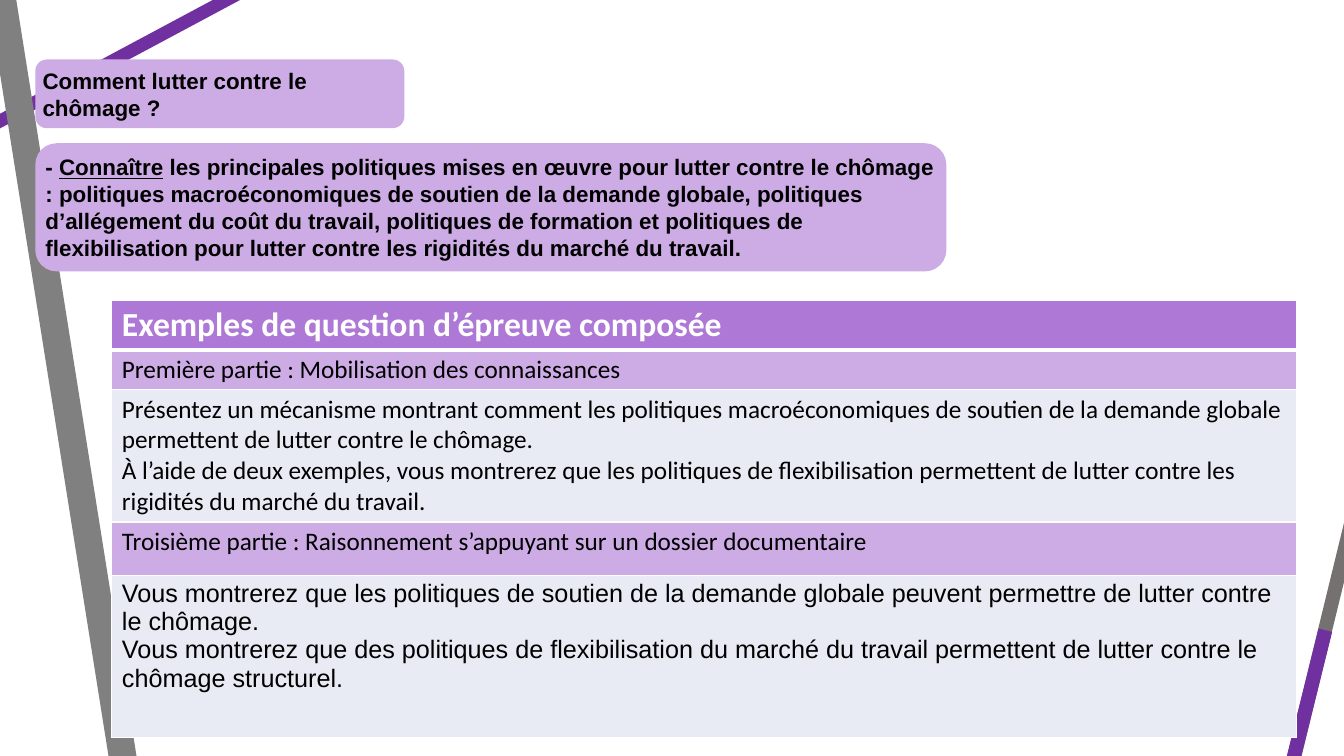
from pptx import Presentation
from pptx.dml.color import RGBColor
from pptx.enum.shapes import MSO_CONNECTOR, MSO_SHAPE
from pptx.enum.text import MSO_ANCHOR, PP_ALIGN
from pptx.oxml.ns import qn
from pptx.util import Cm, Pt
from lxml.etree import SubElement

PURPLE = RGBColor(0x70, 0x30, 0xA0)
GREY = RGBColor(0x80, 0x80, 0x80)
DARK_GREY = RGBColor(0x76, 0x71, 0x71)
LILAC = RGBColor(0xCD, 0xAC, 0xE6)
VIOLET = RGBColor(0xAE, 0x78, 0xD6)
PALE = RGBColor(0xE8, 0xEB, 0xF4)
BLACK = RGBColor(0, 0, 0)
WHITE = RGBColor(255, 255, 255)

STRIPES = [
    ((-5.31, 5.89), (13.11, -3.96), PURPLE, 9.25),
    ((0, -0.36), (3.2, 19.76), GREY, 19.75),
    ((31.14, 25.12), (34.67, 10.64), DARK_GREY, 10),
    ((30.94, 25.78), (33.4, 15.88), PURPLE, 10),
]
PANELS = [
    ((0.89, 1.5, 9.3, 1.73), [("Comment lutter contre le chômage ?", False)]),
    ((0.89, 3.61, 22.96, 3.23), [
        ("- ", False),
        ("Connaître", True),
        (" les principales politiques mises en œuvre pour lutter contre le chômage : "
         "politiques macroéconomiques de soutien de la demande globale, politiques "
         "d’allégement du coût du travail, politiques de formation et politiques de "
         "flexibilisation pour lutter contre les rigidités du marché du travail.", False),
    ]),
]
EXAM_ROWS = [
    (1.24, VIOLET, "Calibri", ["Exemples de question d’épreuve composée"]),
    (1.0, LILAC, "Calibri", ["Première partie : Mobilisation des connaissances"]),
    (3.33, PALE, "Calibri", [
        "Présentez un mécanisme montrant comment les politiques macroéconomiques de "
        "soutien de la demande globale permettent de lutter contre le chômage.",
        "À l’aide de deux exemples, vous montrerez que les politiques de flexibilisation "
        "permettent de lutter contre les rigidités du marché du travail."]),
    (1.34, LILAC, "Calibri",
     ["Troisième partie : Raisonnement s’appuyant sur un dossier documentaire"]),
    (4.1, PALE, "Arial", [
        "Vous montrerez que les politiques de soutien de la demande globale peuvent "
        "permettre de lutter contre le chômage.\v"
        "Vous montrerez que des politiques de flexibilisation du marché du travail "
        "permettent de lutter contre le chômage structurel."]),
]
EXAM_LEFT, EXAM_TOP, EXAM_WIDTH = 2.82, 7.57, 29.85
THIN, THICK = 0.96, 3


def style(paragraph, face, size, color, bold):
    font = paragraph.font
    font.name, font.size, font.bold = face, Pt(size), bold
    font.color.rgb = color


def add_stripe(slide, start, end, color, width):
    stripe = slide.shapes.add_connector(
        MSO_CONNECTOR.STRAIGHT, *(Cm(v) for v in start + end))
    stripe.line.color.rgb = color
    stripe.line.width = Pt(width)
    SubElement(stripe._element.spPr, qn("a:effectLst"))


def add_panel(slide, place, pieces):
    panel = slide.shapes.add_shape(MSO_SHAPE.ROUNDED_RECTANGLE, *(Cm(v) for v in place))
    panel.shadow.inherit = False
    panel.fill.solid()
    panel.fill.fore_color.rgb = LILAC
    panel.line.fill.background()
    frame = panel.text_frame
    frame.word_wrap = True
    frame.vertical_anchor = MSO_ANCHOR.MIDDLE
    frame.margin_left = frame.margin_right = Cm(0.1)
    frame.margin_top = frame.margin_bottom = Cm(0.1)
    paragraph = frame.paragraphs[0]
    paragraph.alignment = PP_ALIGN.LEFT
    style(paragraph, "Arial", 16, BLACK, True)
    for text, underlined in pieces:
        run = paragraph.add_run()
        run.text = text
        if underlined:
            run.font.underline = True


def set_borders(cell, widths):
    props = cell._tc.get_or_add_tcPr()
    for position, (side, width) in enumerate(widths.items()):
        border = SubElement(props, qn(f"a:ln{side}"), w=str(int(Pt(width))))
        fill = SubElement(border, qn("a:solidFill"))
        SubElement(fill, qn("a:srgbClr"), val=str(WHITE))
        props.insert(position, border)


def add_exam(slide):
    height = sum(row[0] for row in EXAM_ROWS)
    exam = slide.shapes.add_table(
        len(EXAM_ROWS), 1, Cm(EXAM_LEFT), Cm(EXAM_TOP), Cm(EXAM_WIDTH), Cm(height)).table
    for index, (row_height, color, face, lines) in enumerate(EXAM_ROWS):
        exam.rows[index].height = Cm(row_height)
        cell = exam.cell(index, 0)
        cell.margin_top = cell.margin_bottom = Cm(0.11)
        cell.fill.solid()
        cell.fill.fore_color.rgb = color
        set_borders(cell, {"L": THIN, "R": THIN,
                           "T": THICK if index == 1 else THIN,
                           "B": THICK if index == 0 else THIN})
        cell.text = "\n".join(lines)
        heading = index == 0
        for paragraph in cell.text_frame.paragraphs:
            style(paragraph, face, 24 if heading else 18,
                  WHITE if heading else BLACK, heading)


def main():
    deck = Presentation()
    deck.slide_width, deck.slide_height = Cm(33.87), Cm(19.05)
    slide = deck.slides.add_slide(deck.slide_layouts[6])
    for stripe in STRIPES:
        add_stripe(slide, *stripe)
    for panel in PANELS:
        add_panel(slide, *panel)
    add_exam(slide)
    deck.save("out.pptx")


if __name__ == "__main__":
    main()
